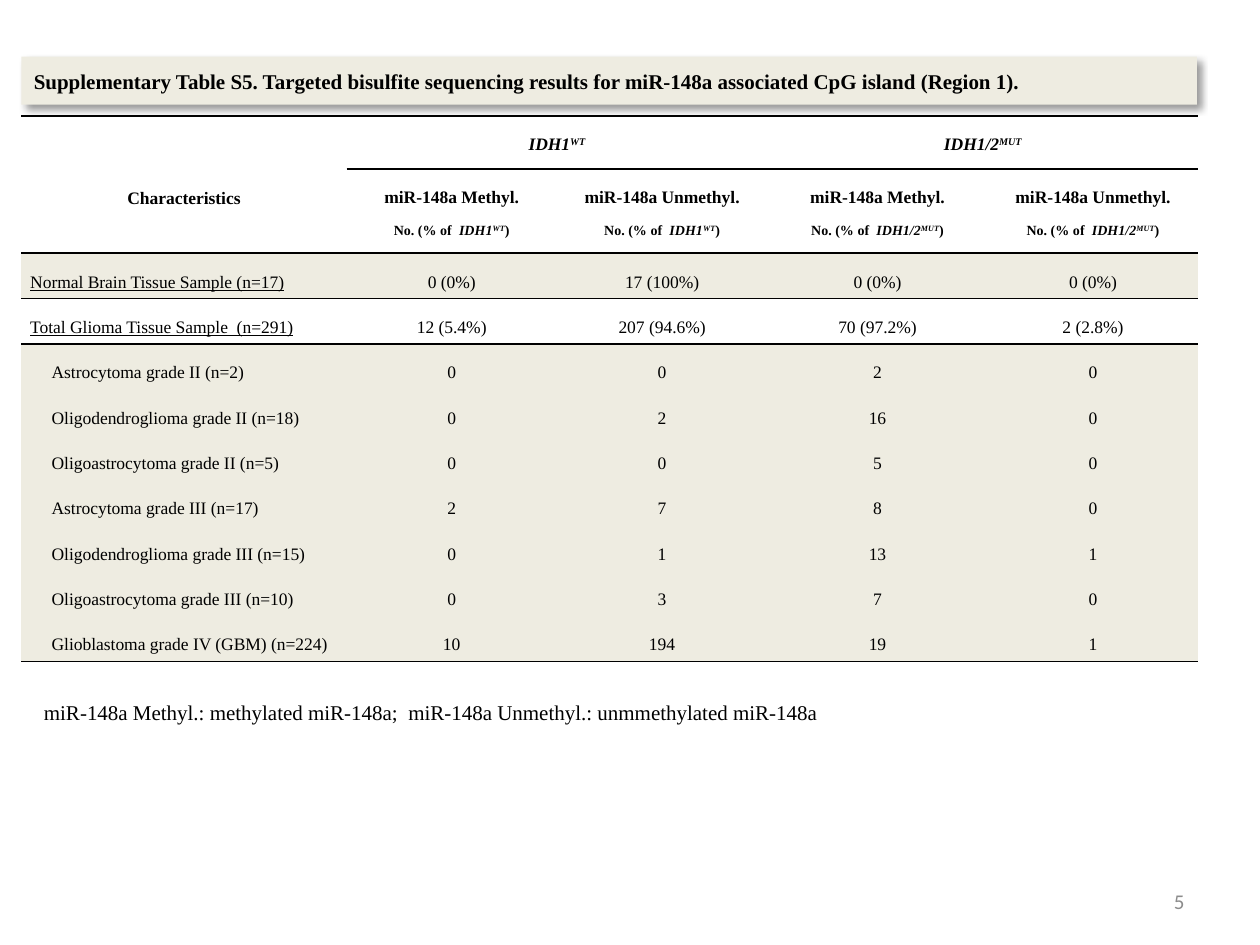
from lxml import etree
from pptx import Presentation
from pptx.dml.color import RGBColor
from pptx.enum.shapes import MSO_SHAPE
from pptx.enum.text import MSO_ANCHOR as ANCHOR, PP_ALIGN as ALIGN
from pptx.oxml import parse_xml
from pptx.oxml.ns import nsdecls, qn
from pptx.util import Inches, Pt

SERIF = "Times New Roman"
BLACK, BEIGE, WHITE, GREY = "000000", "EEECE1", "FFFFFF", "8C8C8C"
NO_STYLE = "{2D5ABB26-0587-4C30-8999-92F81FD0307C}"

COL_WIDTHS = [2.58, 1.67, 1.67, 1.75, 1.67]
ROW_HEIGHTS = [0.42, 0.67] + [0.36] * 9
GROUPS = [("IDH1", "WT"), ("IDH1/2", "MUT")]
STATES = ["miR-148a Methyl.", "miR-148a Unmethyl."]
TOTALS = [
    ("Normal Brain Tissue Sample (n=17)", "0 (0%)", "17 (100%)", "0 (0%)", "0 (0%)"),
    ("Total Glioma Tissue Sample  (n=291)", "12 (5.4%)", "207 (94.6%)", "70 (97.2%)", "2 (2.8%)"),
]
SUBTYPES = [
    ("Astrocytoma grade II (n=2)", 0, 0, 2, 0),
    ("Oligodendroglioma grade II (n=18)", 0, 2, 16, 0),
    ("Oligoastrocytoma grade II (n=5)", 0, 0, 5, 0),
    ("Astrocytoma grade III (n=17)", 2, 7, 8, 0),
    ("Oligodendroglioma grade III (n=15)", 0, 1, 13, 1),
    ("Oligoastrocytoma grade III (n=10)", 0, 3, 7, 0),
    ("Glioblastoma grade IV (GBM) (n=224)", 10, 194, 19, 1),
]


def rgb(value):
    return RGBColor.from_string(value)


def add_run(p, text, size=10, color=BLACK, font=SERIF, bold=False,
            italic=False, underline=False, superscript=False):
    r = p.add_run()
    r.text = text
    r.font.name, r.font.size = font, Pt(size)
    r.font.bold, r.font.italic, r.font.underline = bold, italic, underline
    r.font.color.rgb = rgb(color)
    if superscript:
        r.font._element.set("baseline", "30000")


def add_gene(p, group, size):
    gene, status = group
    add_run(p, gene, size, bold=True, italic=True)
    add_run(p, status, size, bold=True, italic=True, superscript=True)


def format_paragraph(p, align=ALIGN.CENTER, spacing=2.0):
    p.alignment, p.line_spacing = align, spacing
    return p


def add_border(cell, side):
    """Draw a black line on one side of a cell: "T" or "B"."""
    tc_pr = cell._tc.get_or_add_tcPr()
    tc_pr.append(parse_xml(
        f'<a:ln{side} {nsdecls("a")} w="12700"><a:solidFill>'
        f'<a:srgbClr val="{BLACK}"/></a:solidFill></a:ln{side}>'))


def add_title(slide, left, top, width, height):
    sp = slide.shapes.add_shape(MSO_SHAPE.RECTANGLE, left, top, width, height)
    sp.fill.solid()
    sp.fill.fore_color.rgb = rgb(BEIGE)
    sp.line.fill.background()
    sp.shadow.inherit = False
    effects = sp._element.spPr.find(qn("a:effectLst"))
    shadow = etree.SubElement(effects, qn("a:outerShdw"), blurRad=str(Pt(4)),
                              dist=str(Pt(3)), dir=str(45 * 60000),
                              algn="tl", rotWithShape="0")
    color = etree.SubElement(shadow, qn("a:srgbClr"), val=BLACK)
    etree.SubElement(color, qn("a:alpha"), val="40000")
    tf = sp.text_frame
    tf.word_wrap, tf.vertical_anchor = True, ANCHOR.MIDDLE
    p = tf.paragraphs[0]
    p.alignment = ALIGN.LEFT
    add_run(p, "Supplementary Table S5. Targeted bisulfite sequencing results for "
               "miR-148a associated CpG island (Region 1).", 12, bold=True)


def fill_header(table):
    corner = table.cell(0, 0)
    corner.merge(table.cell(1, 0))
    corner.vertical_anchor = ANCHOR.MIDDLE
    p = format_paragraph(corner.text_frame.paragraphs[0], spacing=2.5)
    add_run(p, "Characteristics", bold=True)
    for g, group in enumerate(GROUPS):
        first = 1 + g * len(STATES)
        top = table.cell(0, first)
        top.merge(table.cell(0, first + len(STATES) - 1))
        add_gene(format_paragraph(top.text_frame.paragraphs[0]), group, 10)
        for col, state in enumerate(STATES, first):
            tf = table.cell(1, col).text_frame
            add_run(format_paragraph(tf.paragraphs[0]), state, bold=True)
            p = format_paragraph(tf.add_paragraph())
            add_run(p, "No. (% of  ", 8, bold=True)
            add_gene(p, group, 8)
            add_run(p, ")", 8, bold=True)


def fill_body(table):
    for row, values in enumerate(TOTALS + SUBTYPES, 2):
        is_total = row < 2 + len(TOTALS)
        for col, value in enumerate(values):
            cell = table.cell(row, col)
            is_label = col == 0
            if is_label and not is_total:
                cell.margin_left = Inches(0.24)
            p = format_paragraph(cell.text_frame.paragraphs[0],
                                 ALIGN.LEFT if is_label else ALIGN.CENTER)
            add_run(p, str(value), underline=is_label and is_total)


def add_results_table(slide, left, top, width, height):
    frame = slide.shapes.add_table(len(ROW_HEIGHTS), len(COL_WIDTHS),
                                   left, top, width, height)
    table = frame.table
    table.first_row = table.horz_banding = False
    table._tbl.tblPr.find(qn("a:tableStyleId")).text = NO_STYLE
    for column, w in zip(table.columns, COL_WIDTHS):
        column.width = Inches(w)
    for row, h in zip(table.rows, ROW_HEIGHTS):
        row.height = Inches(h)

    last = len(ROW_HEIGHTS) - 1
    for i, row in enumerate(table.rows):
        for cell in row.cells:
            cell.margin_left = cell.margin_right = Inches(0.07)
            cell.margin_top = cell.margin_bottom = 0
            if i <= 3:
                add_border(cell, "T")
            if i <= 2 or i == last:
                add_border(cell, "B")
            if i < 2:
                cell.fill.background()
            else:
                cell.fill.solid()
                cell.fill.fore_color.rgb = rgb(WHITE if i == 3 else BEIGE)
    fill_header(table)
    fill_body(table)


def add_text(slide, left, top, width, height, text, align=ALIGN.LEFT,
             anchor=ANCHOR.TOP, **style):
    tf = slide.shapes.add_textbox(left, top, width, height).text_frame
    tf.word_wrap, tf.vertical_anchor = True, anchor
    p = tf.paragraphs[0]
    p.alignment = align
    add_run(p, text, 12, **style)


def main():
    prs = Presentation()
    prs.slide_width, prs.slide_height = Inches(10), Inches(7.5)
    slide = prs.slides.add_slide(prs.slide_layouts[6])
    left, width = Inches(0.17), Inches(9.33)
    add_title(slide, left, Inches(0.45), width, Inches(0.38))
    add_results_table(slide, left, Inches(0.92), width, Inches(4.32))
    add_text(slide, Inches(0.25), Inches(5.5), Inches(9.25), Inches(0.3),
             "miR-148a Methyl.: methylated miR-148a;  "
             "miR-148a Unmethyl.: unmmethylated miR-148a")
    add_text(slide, Inches(7.17), Inches(6.95), Inches(2.33), Inches(0.4), "5",
             ALIGN.RIGHT, ANCHOR.MIDDLE, color=GREY, font="Calibri")
    prs.save("out.pptx")


if __name__ == "__main__":
    main()
